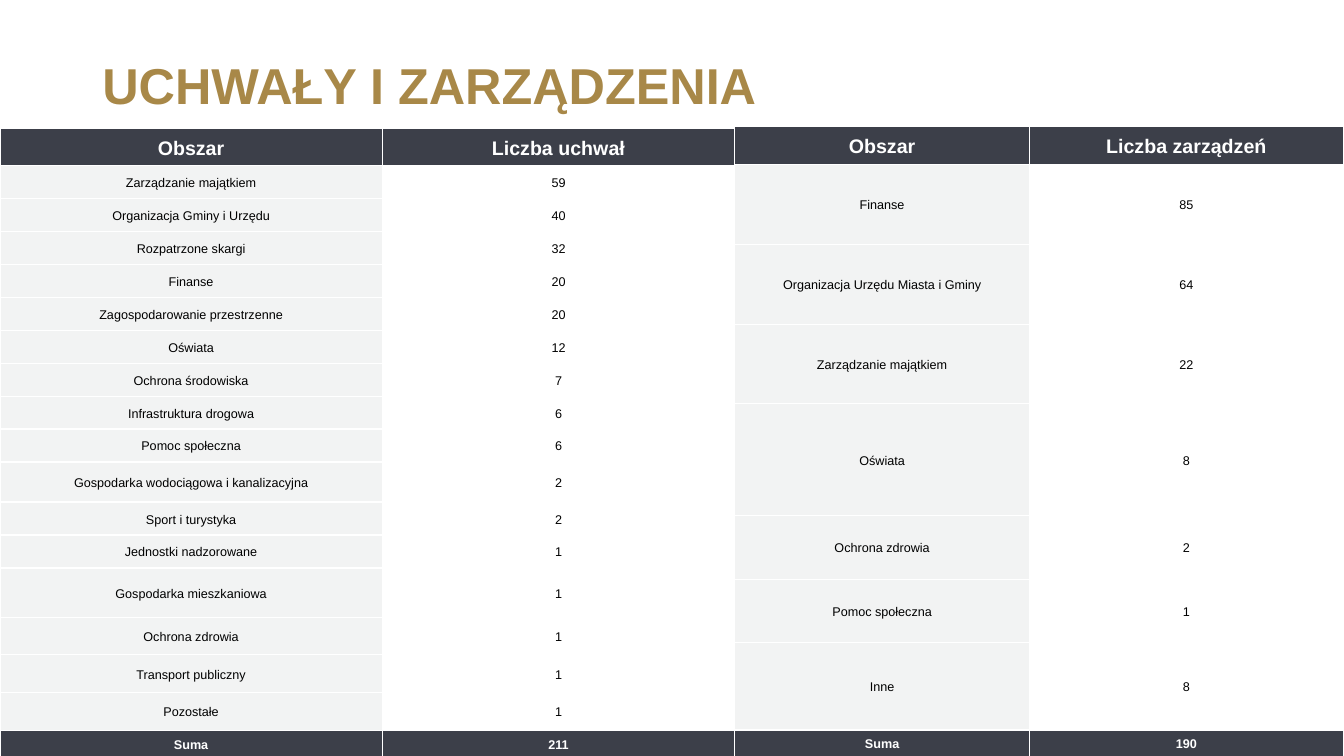
from lxml import etree
from pptx import Presentation
from pptx.dml.color import RGBColor
from pptx.enum import text
from pptx.oxml.ns import qn
from pptx.util import Cm, Pt

FONT = "Arial"
COLORS = {"gold": "A88848", "dark": "3C3F49", "pale": "F2F3F3", "white": "FFFFFF", "black": "000000"}
TITLE = "UCHWAŁY I ZARZĄDZENIA"

# Lengths in centimetres; each row is (area, count, row height)
ORDERS = {
    "left": 18.52, "top": 3.18, "columns": (7.42, 7.92),
    "rows": [
        ("Obszar", "Liczba zarządzeń", 0.97),
        ("Finanse", "85", 2.01),
        ("Organizacja Urzędu Miasta i Gminy", "64", 2.01),
        ("Zarządzanie majątkiem", "22", 2.01),
        ("Oświata", "8", 2.82),
        ("Ochrona zdrowia", "2", 1.6),
        ("Pomoc społeczna", "1", 1.6),
        ("Inne", "8", 2.2),
        ("Suma", "190", 0.66),
    ],
}
RESOLUTIONS = {
    "left": 0, "top": 3.23, "columns": (9.63, 8.89),
    "rows": [
        ("Obszar", "Liczba uchwał", 0.86),
        ("Zarządzanie majątkiem", "59", 0.83),
        ("Organizacja Gminy i Urzędu", "40", 0.83),
        ("Rozpatrzone skargi", "32", 0.83),
        ("Finanse", "20", 0.83),
        ("Zagospodarowanie przestrzenne", "20", 0.83),
        ("Oświata", "12", 0.83),
        ("Ochrona środowiska", "7", 0.83),
        ("Infrastruktura drogowa", "6", 0.83),
        ("Pomoc społeczna", "6", 0.83),
        ("Gospodarka wodociągowa i kanalizacyjna", "2", 1.01),
        ("Sport i turystyka", "2", 0.83),
        ("Jednostki nadzorowane", "1", 0.83),
        ("Gospodarka mieszkaniowa", "1", 1.24),
        ("Ochrona zdrowia", "1", 0.95),
        ("Transport publiczny", "1", 0.95),
        ("Pozostałe", "1", 0.95),
        ("Suma", "211", 0.7),
    ],
}


def set_font(paragraph, size, color, bold):
    font = paragraph.font
    font.name, font.size, font.bold = FONT, Pt(size), bold
    font.color.rgb = RGBColor.from_string(COLORS[color])


def add_borders(cell):
    properties = cell._tc.get_or_add_tcPr()
    for side in ("lnL", "lnR", "lnT", "lnB"):
        line = etree.SubElement(properties, qn(f"a:{side}"), w=str(Pt(1)))
        fill = etree.SubElement(line, qn("a:solidFill"))
        etree.SubElement(fill, qn("a:srgbClr"), val=COLORS["white"])


def style_cell(cell, content, fill, size, color, bold):
    cell.text = content
    cell.vertical_anchor = text.MSO_ANCHOR.MIDDLE
    cell.margin_left = cell.margin_right = Cm(0.16)
    cell.margin_top = cell.margin_bottom = Cm(0.13)
    paragraph = cell.text_frame.paragraphs[0]
    paragraph.alignment = text.PP_ALIGN.CENTER
    paragraph.line_spacing = 1.15
    set_font(paragraph, size, color, bold)
    add_borders(cell)
    if fill:
        cell.fill.solid()
        cell.fill.fore_color.rgb = RGBColor.from_string(COLORS[fill])
    else:
        cell.fill.background()


def add_summary_table(slide, data):
    """Add a table whose first and last rows are dark and whose area column is pale."""
    rows, widths = data["rows"], data["columns"]
    height = sum(row[-1] for row in rows)
    table = slide.shapes.add_table(len(rows), len(widths), Cm(data["left"]), Cm(data["top"]),
                                   Cm(sum(widths)), Cm(height)).table
    table.first_row = table.horz_banding = False
    for column, width in zip(table.columns, widths):
        column.width = Cm(width)
    for row_index, (*contents, row_height) in enumerate(rows):
        table.rows[row_index].height = Cm(row_height)
        emphasized = row_index in (0, len(rows) - 1)
        for column_index, content in enumerate(contents):
            fill = "dark" if emphasized else ("pale", None)[column_index]
            style_cell(table.cell(row_index, column_index), content, fill,
                       size=14 if row_index == 0 else 9,
                       color="white" if emphasized else "black", bold=emphasized)


def add_title(slide):
    frame = slide.shapes.add_textbox(Cm(2.33), Cm(1.35), Cm(29.21), Cm(3.02)).text_frame
    frame.word_wrap = True
    frame.vertical_anchor = text.MSO_ANCHOR.TOP
    frame.margin_top = Cm(0.19)
    paragraph = frame.paragraphs[0]
    paragraph.text = TITLE
    paragraph.line_spacing = 0.9
    set_font(paragraph, 36, "gold", True)


def main():
    presentation = Presentation()
    presentation.slide_width, presentation.slide_height = Cm(33.87), Cm(19.05)
    slide = presentation.slides.add_slide(presentation.slide_layouts[6])
    add_summary_table(slide, ORDERS)
    add_title(slide)
    add_summary_table(slide, RESOLUTIONS)
    presentation.save("out.pptx")


if __name__ == "__main__":
    main()
